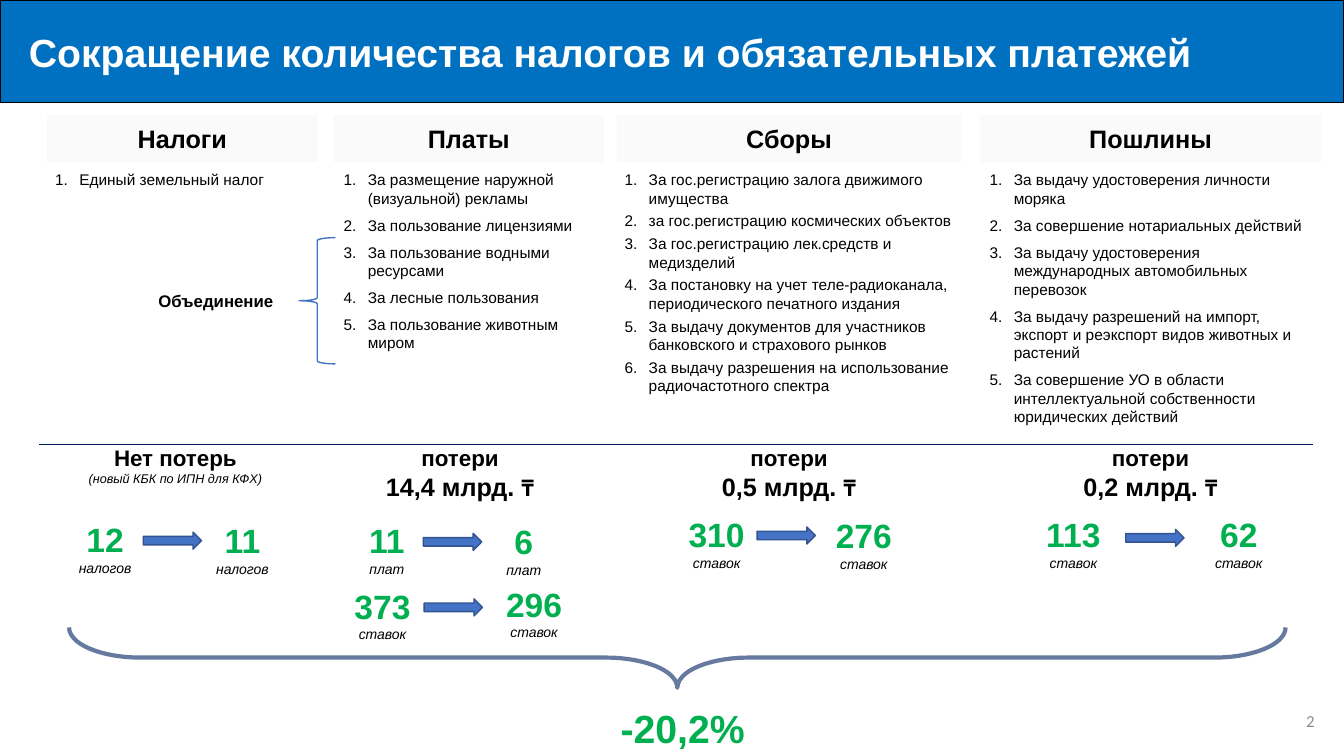
from lxml import etree
from pptx import Presentation
from pptx.dml.color import RGBColor
from pptx.enum.shapes import MSO_CONNECTOR, MSO_SHAPE
from pptx.enum.text import MSO_ANCHOR, PP_ALIGN
from pptx.oxml.ns import qn
from pptx.util import Cm, Pt

RECT, ARROW, BRACE = MSO_SHAPE.RECTANGLE, MSO_SHAPE.RIGHT_ARROW, MSO_SHAPE.LEFT_BRACE
STRAIGHT = MSO_CONNECTOR.STRAIGHT
LEFT, CENTER, RIGHT = PP_ALIGN.LEFT, PP_ALIGN.CENTER, PP_ALIGN.RIGHT
TOP, MIDDLE = MSO_ANCHOR.TOP, MSO_ANCHOR.MIDDLE

COLORS = {
    "banner": "0070C0", "header": "FAFAFA", "black": "000000", "white": "FFFFFF",
    "green": "00B050", "navy": "002060", "blue": "4472C4", "arrow_edge": "325491",
    "gray": "8C8C8C",
}

# title, left, width
HEADERS = [
    ("Налоги", 1.19, 6.81), ("Платы", 8.41, 6.81),
    ("Сборы", 15.54, 8.69), ("Пошлины", 24.69, 8.61),
]
# left, width, height, space before, items
LISTS = [
    (1.14, 6.83, 0.74, 6, ["Единый земельный налог"]),
    (8.41, 6.71, 4.88, 6, [
        "За размещение наружной (визуальной) рекламы",
        "За пользование лицензиями",
        "За пользование водными ресурсами",
        "За лесные пользования",
        "За пользование животным миром",
    ]),
    (15.49, 8.92, 5.97, 3, [
        "За гос.регистрацию залога движимого имущества",
        "за гос.регистрацию космических объектов",
        "За гос.регистрацию лек.средств и медизделий",
        "За постановку на учет теле-радиоканала, периодического печатного издания",
        "За выдачу документов для участников банковского и страхового рынков",
        "За выдачу разрешения на использование радиочастотного спектра",
    ]),
    (24.69, 8.74, 6.76, 6, [
        "За выдачу удостоверения личности моряка",
        "За совершение нотариальных действий",
        "За выдачу удостоверения международных автомобильных перевозок",
        "За выдачу разрешений на импорт, экспорт и реэкспорт видов животных и растений",
        "За совершение УО в области интеллектуальной собственности юридических действий",
    ]),
]
# amount, left, width
LOSSES = [
    ("14,4 млрд. ", 8.23, 6.73), ("0,5 млрд. ", 15.62, 8.53), ("0,2 млрд. ", 24.69, 8.61),
]
# unit, (number, centre, top) before, (number, centre, top) after, (left, top) of arrow
CHANGES = [
    ("налогов", ("12", 2.65, 12.95), ("11", 6.11, 12.98), (3.61, 13.41)),
    ("плат", ("11", 9.75, 12.98), ("6", 13.2, 13), (10.67, 13.44)),
    ("ставок", ("373", 9.64, 14.63), ("296", 13.46, 14.58), (10.69, 15.09)),
    ("ставок", ("310", 18.06, 12.83), ("276", 21.77, 12.85), (19.08, 13.28)),
    ("ставок", ("113", 27.05, 12.83), ("62", 31.22, 12.83), (28.37, 13.34)),
]


def color(name):
    """Return the named colour."""
    return RGBColor.from_string(COLORS[name])


def write(shape, *paragraphs, size=18, font="Arial", ink="black", bold=False, italic=False,
          align=LEFT, anchor=TOP, wrap=True, gap=0, indent=0, numbered=False):
    """Fill a shape with paragraphs, each a list of (text, format overrides) runs."""
    frame = shape.text_frame
    frame.word_wrap = wrap
    frame.vertical_anchor = anchor
    for index, runs in enumerate(paragraphs):
        paragraph = frame.paragraphs[0] if index == 0 else frame.add_paragraph()
        paragraph.alignment = align
        if index and gap:
            paragraph.space_before = Pt(gap)
        properties = paragraph._p.get_or_add_pPr()
        if indent:
            properties.set("marL", str(Cm(indent)))
        if numbered:
            properties.set("indent", str(-Cm(indent)))
            etree.SubElement(properties, qn("a:buFont"), typeface="+mj-lt")
            etree.SubElement(properties, qn("a:buAutoNum"), type="arabicPeriod")
        for text, changes in runs:
            style = {"size": size, "font": font, "ink": ink, "bold": bold,
                     "italic": italic, **changes}
            run = paragraph.add_run()
            run.text = text
            run.font.size = Pt(style["size"])
            run.font.name = style["font"]
            run.font.bold = style["bold"]
            run.font.italic = style["italic"]
            run.font.color.rgb = color(style["ink"])


def add_text(slide, left, top, width, height, *paragraphs, **style):
    """Add a text box."""
    box = slide.shapes.add_textbox(Cm(left), Cm(top), Cm(width), Cm(height))
    write(box, *paragraphs, **style)


def add_figure(slide, kind, left, top, width, height, fill=None, edge=None, weight=1):
    """Add a preset shape with an optional fill and outline."""
    figure = slide.shapes.add_shape(kind, Cm(left), Cm(top), Cm(width), Cm(height))
    figure.shadow.inherit = False
    if fill:
        figure.fill.solid()
        figure.fill.fore_color.rgb = color(fill)
    else:
        figure.fill.background()
    if edge:
        figure.line.color.rgb = color(edge)
        figure.line.width = Pt(weight)
    else:
        figure.line.fill.background()
    return figure


def add_divider(slide, left, right, y):
    """Add the horizontal rule between the lists and the losses."""
    divider = slide.shapes.add_connector(STRAIGHT, Cm(left), Cm(y), Cm(right), Cm(y))
    divider.line.color.rgb = color("navy")
    divider.line.width = Pt(1)
    etree.SubElement(divider._element.spPr, qn("a:effectLst"))


def add_total_brace(slide):
    """Add the wide translucent brace that sums up all columns."""
    brace = add_figure(slide, BRACE, 16.31, 1.24, 1.52, 30.66, edge="navy", weight=3)
    brace.rotation = 270
    brace.adjustments[0] = 1.185
    ink = brace._element.spPr.find(qn("a:ln")).find(".//" + qn("a:srgbClr"))
    etree.SubElement(ink, qn("a:alpha"), val="60000")


def add_change(slide, unit, before, after, arrow):
    """Add a number before, an arrow and a number after."""
    width = 1.95
    for number, centre, top in (before, after):
        add_text(slide, centre - width / 2, top, width, 1.7,
                 [(number, {"size": 24, "ink": "green", "bold": True})],
                 [(unit, {"italic": True})], size=10, align=CENTER, wrap=False)
    add_figure(slide, ARROW, *arrow, 1.47, 0.43, fill="blue", edge="arrow_edge")


def main():
    """Build the slide and save it."""
    deck = Presentation()
    deck.slide_width, deck.slide_height = Cm(33.87), Cm(19.05)
    slide = deck.slides.add_slide(deck.slide_layouts[6])

    banner = add_figure(slide, RECT, 0, 0, 33.87, 2.59, fill="banner", edge="black")
    write(banner, [("Сокращение количества налогов и обязательных платежей", {})],
          size=28, ink="white", bold=True, anchor=MIDDLE, indent=0.48)

    for title, left, width in HEADERS:
        header = add_figure(slide, RECT, left, 2.9, width, 1.19, fill="header")
        write(header, [(title, {})], bold=True, align=CENTER, anchor=MIDDLE)
    for left, width, height, gap, items in LISTS:
        add_text(slide, left, 4.17, width, height, *[[(item, {})] for item in items],
                 size=11, gap=gap, indent=0.61, numbered=True)

    add_figure(slide, BRACE, 7.54, 5.99, 0.91, 3.18, edge="blue")
    add_text(slide, 0.56, 7.21, 6.58, 0.76, [("Объединение", {})],
             size=12, bold=True, align=RIGHT)
    add_divider(slide, 0.99, 33.1, 11.2)

    add_text(slide, 0.99, 11.07, 6.86, 1.32, [("Нет потерь", {"size": 16, "bold": True})],
             [("(новый КБК по ИПН для КФХ)", {"italic": True})], size=9, align=CENTER)
    for amount, left, width in LOSSES:
        add_text(slide, left, 11.07, width, 1.7, [("потери", {"size": 16})],
                 [(amount, {}), ("₸", {"font": "Calibri"})], bold=True, align=CENTER)
    for change in CHANGES:
        add_change(slide, *change)

    add_total_brace(slide)
    add_text(slide, 15.39, 17.63, 3.89, 1.45, [("-20,2%", {})],
             size=28, ink="green", bold=True)
    add_text(slide, 25.76, 17.65, 7.62, 1.02, [("2", {})], size=12, font="Calibri",
             ink="gray", align=RIGHT, anchor=MIDDLE)
    deck.save("out.pptx")


if __name__ == "__main__":
    main()
